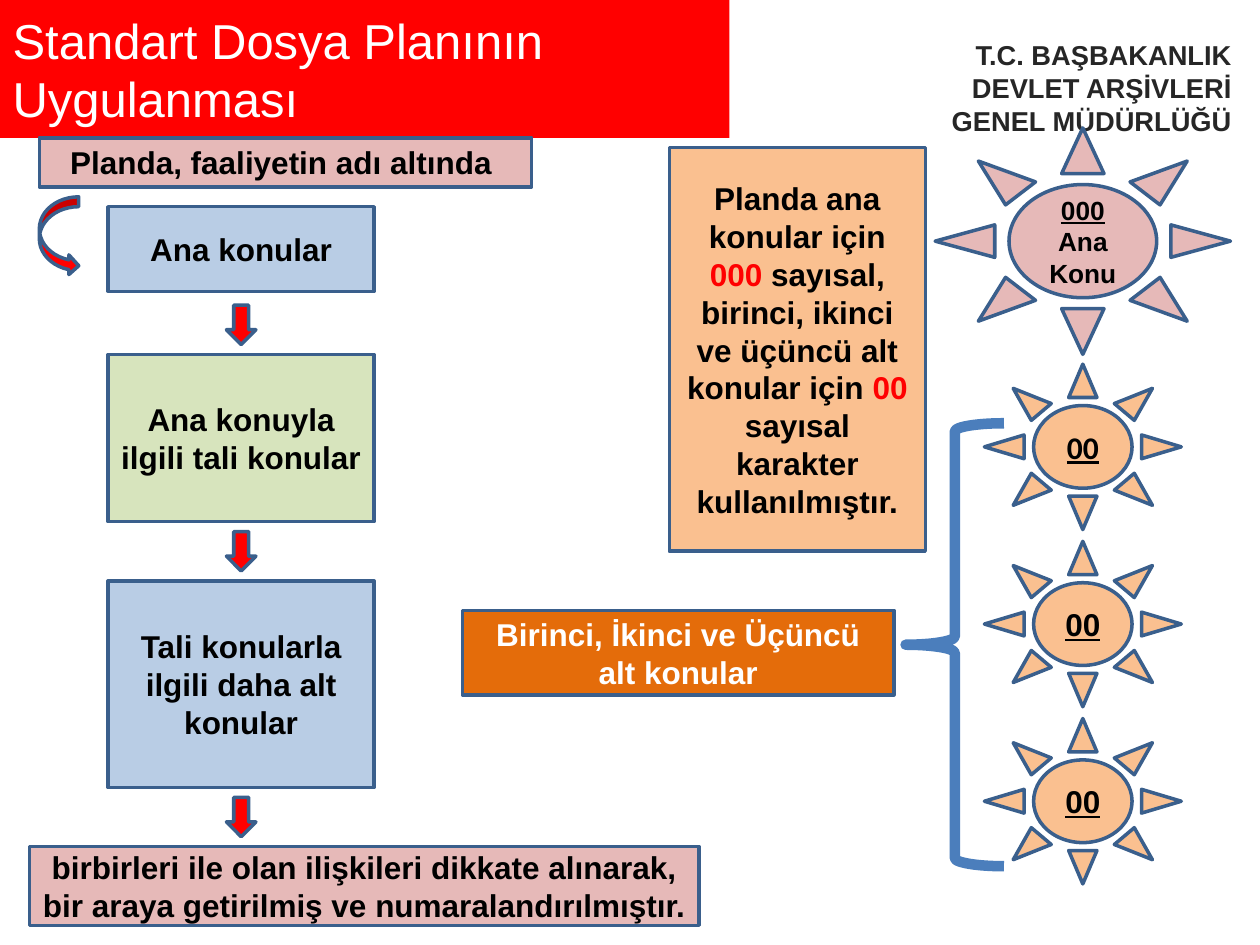
from dataclasses import dataclass

from pptx import Presentation
from pptx.dml.color import RGBColor
from pptx.enum.shapes import MSO_SHAPE
from pptx.enum.text import MSO_ANCHOR, MSO_AUTO_SIZE, PP_ALIGN
from pptx.util import Pt

SCALE = 914400 / 128  # EMU per px, slide is 1280 x 960 px


@dataclass(frozen=True)
class Theme:
    font: str = "Arial"
    sun_font: str = "Calibri"
    white: str = "FFFFFF"
    black: str = "000000"
    header_text: str = "262626"
    red: str = "FF0000"
    pink: str = "E6B9B8"
    blue: str = "B9CDE5"
    green: str = "D7E4BD"
    peach: str = "FAC090"
    orange: str = "E46C0A"
    outline: str = "3A5F8C"
    brace: str = "4B7EBC"
    title_size: float = 28
    body_size: float = 18
    header_size: float = 15.6
    main_sun_size: float = 15


THEME = Theme()

# Content: places are (left, top, width, height) in px
TITLE = "Standart Dosya Planının \vUygulanması"
TITLE_PLACE = (0, 0, 741, 140)
HEADER = ["T.C. BAŞBAKANLIK", "DEVLET ARŞİVLERİ", "GENEL MÜDÜRLÜĞÜ"]
HEADER_PLACE = (774, 9, 490, 160)

# Text between bars is set in red
BOXES = [
    ("Planda ana konular için |000 |sayısal, birinci, ikinci ve üçüncü alt "
     "konular için |00| sayısal karakter kullanılmıştır.",
     (680, 150, 260, 410), THEME.peach, THEME.black),
    ("Birinci, İkinci ve Üçüncü alt konular",
     (470, 620, 438, 86), THEME.orange, THEME.white),
    ("Planda, faaliyetin adı altında ",
     (40, 140, 500, 50), THEME.pink, THEME.black),
    ("birbirleri ile olan ilişkileri dikkate alınarak, bir araya getirilmiş "
     "ve numaralandırılmıştır.",
     (30, 860, 680, 80), THEME.pink, THEME.black),
]

# Steps of the flow: text, top, height, fill, top of the arrow below
STEP_LEFT, STEP_WIDTH = 110, 270
ARROW_WIDTH, ARROW_HEIGHT = 30, 40
STEPS = [
    ("Ana konular", 210, 86, THEME.blue, 310),
    ("Ana konuyla ilgili tali konular", 360, 170, THEME.green, 540),
    ("Tali konularla ilgili daha alt konular", 590, 210, THEME.blue, 810),
]
CURVED_ARROW_PLACE = (40, 200, 40, 80)

MAIN_SUN = ["000", "Ana Konu"]
MAIN_SUN_PLACE = (950, 130, 300, 230)
SUB_SUN = "00"
SUB_SUN_FONTS = [THEME.sun_font, THEME.font, THEME.font]
SUB_SUN_TOP, SUB_SUN_STEP = 370, 180
BRACE_PLACE = (920, 430, 100, 450)


def color(value):
    return RGBColor.from_string(value)


def px(place):
    return [round(length * SCALE) for length in place]


def add_part(preset, place, fill, outline=THEME.outline, width=2):
    part = slide.shapes.add_shape(preset, *px(place))
    part.shadow.inherit = False
    if fill:
        part.fill.solid()
        part.fill.fore_color.rgb = color(fill)
    else:
        part.fill.background()
    part.line.color.rgb = color(outline)
    part.line.width = Pt(width)
    return part


def format_run(run, size, ink, font=THEME.font, bold=True, underline=False):
    run.font.name = font
    run.font.size = Pt(size)
    run.font.color.rgb = color(ink)
    run.font.bold = bold
    run.font.underline = underline


def write(part, lines, size=THEME.body_size, ink=THEME.black,
          align=PP_ALIGN.CENTER, font=THEME.font, underline_first=False):
    frame = part.text_frame
    frame.word_wrap = True
    frame.vertical_anchor = MSO_ANCHOR.MIDDLE
    for row, line in enumerate(lines):
        paragraph = frame.add_paragraph() if row else frame.paragraphs[0]
        paragraph.alignment = align
        for index, piece in enumerate(line.split("|")):
            run = paragraph.add_run()
            run.text = piece
            format_run(run, size, THEME.red if index % 2 else ink, font,
                       underline=underline_first and row == 0)


presentation = Presentation()
presentation.slide_width, presentation.slide_height = px((1280, 960))
slide = presentation.slides.add_slide(presentation.slide_layouts[5])

# Title band
title = slide.shapes.title
title.left, title.top, title.width, title.height = px(TITLE_PLACE)
title.fill.solid()
title.fill.fore_color.rgb = color(THEME.red)
title.text_frame.text = TITLE
title.text_frame.word_wrap = True
title.text_frame.auto_size = MSO_AUTO_SIZE.NONE
title.text_frame.vertical_anchor = MSO_ANCHOR.MIDDLE
for paragraph in title.text_frame.paragraphs:
    paragraph.alignment = PP_ALIGN.LEFT
    for run in paragraph.runs:
        format_run(run, THEME.title_size, THEME.white, bold=False)

# Institution header
header = add_part(MSO_SHAPE.RECTANGLE, HEADER_PLACE, THEME.white, THEME.white, 0.75)
write(header, HEADER, THEME.header_size, THEME.header_text, PP_ALIGN.RIGHT)

# Suns with the number codes, and the brace that groups the lower three
main_sun = add_part(MSO_SHAPE.SUN, MAIN_SUN_PLACE, THEME.pink)
write(main_sun, MAIN_SUN, THEME.main_sun_size, underline_first=True)
for order, font in enumerate(SUB_SUN_FONTS):
    place = (1000, SUB_SUN_TOP + order * SUB_SUN_STEP, 200, 168)
    sub_sun = add_part(MSO_SHAPE.SUN, place, THEME.peach)
    write(sub_sun, [SUB_SUN], font=font, underline_first=True)
add_part(MSO_SHAPE.LEFT_BRACE, BRACE_PLACE, None, THEME.brace, 6)

# Explanations
for text, place, fill, ink in BOXES:
    write(add_part(MSO_SHAPE.FLOWCHART_PROCESS, place, fill), [text], ink=ink)

# Flow of steps, each with an arrow centred below it
arrow_left = STEP_LEFT + (STEP_WIDTH - ARROW_WIDTH) / 2
for text, top, height, fill, arrow_top in STEPS:
    step = add_part(MSO_SHAPE.FLOWCHART_PROCESS,
                    (STEP_LEFT, top, STEP_WIDTH, height), fill)
    write(step, [text])
    add_part(MSO_SHAPE.DOWN_ARROW,
             (arrow_left, arrow_top, ARROW_WIDTH, ARROW_HEIGHT), THEME.red)
add_part(MSO_SHAPE.CURVED_RIGHT_ARROW, CURVED_ARROW_PLACE, THEME.red)

presentation.save("out.pptx")
